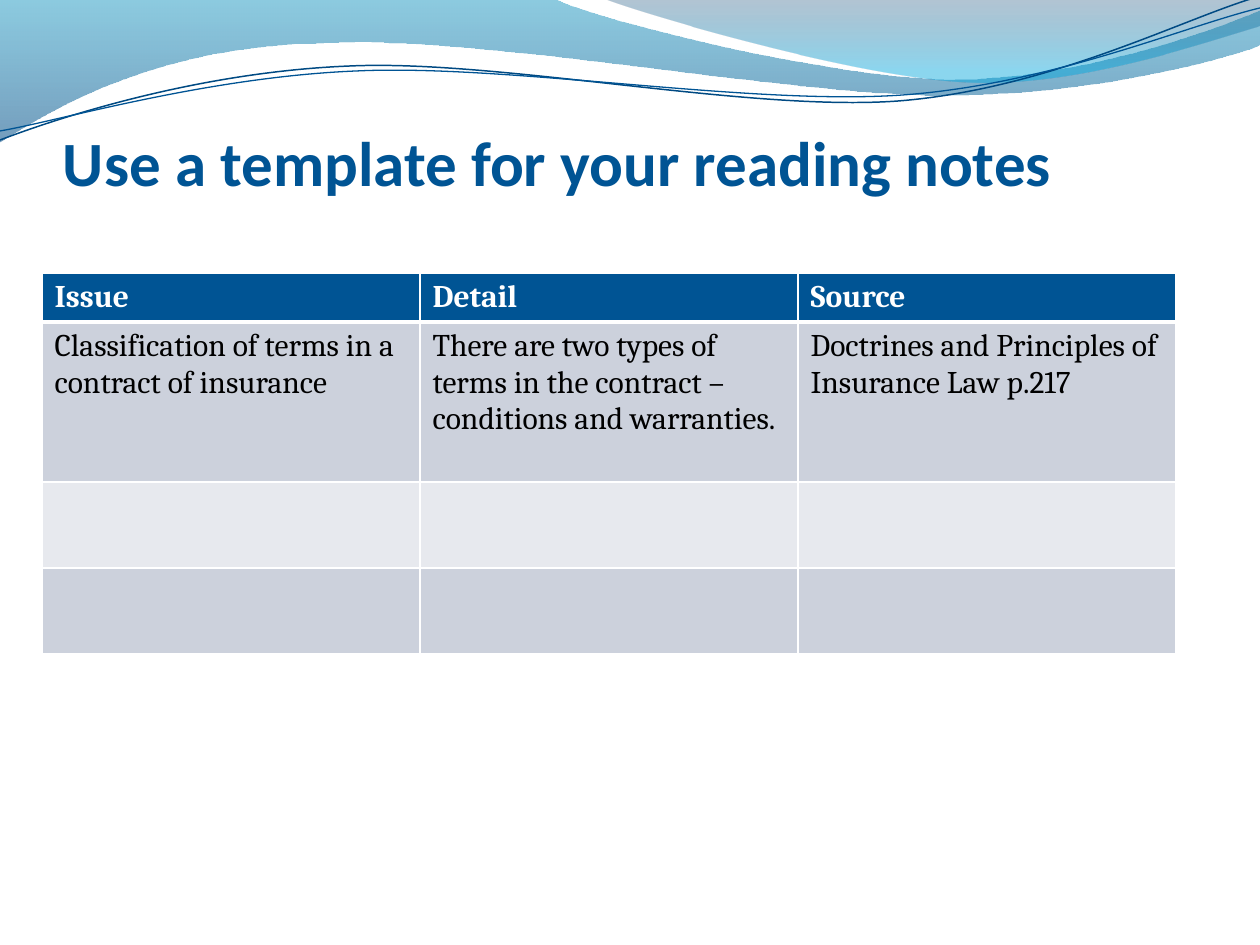
from dataclasses import dataclass

from lxml import etree
from pptx import Presentation
from pptx.dml.color import RGBColor
from pptx.enum.text import MSO_ANCHOR
from pptx.oxml.ns import qn
from pptx.util import Pt

BOTTOM = MSO_ANCHOR.BOTTOM
EMU = 914400 / 126


def px(n):
    return round(n * EMU)


def rgb(value):
    return RGBColor.from_string(value)


@dataclass(frozen=True)
class Theme:
    blue: str = "005494"
    deep_blue: str = "004A83"
    white: str = "FFFFFF"
    black: str = "000000"
    band_dark: str = "CCD1DC"
    band_light: str = "E7E9EE"
    wide_wave: tuple = ((0, "008BBA", 45), (100, "004C86", 55))
    corner_wave: tuple = ((0, "003E6D", 30), (80, "00A6DD", 45))
    title_font: str = "Calibri"
    body_font: str = "Cambria"
    title_size: int = 36
    body_size: int = 18


class Deck:
    def __init__(self, theme, width, height):
        self.theme = theme
        self.prs = Presentation()
        self.prs.slide_width, self.prs.slide_height = px(width), px(height)
        self.slide = self.prs.slides.add_slide(self.prs.slide_layouts[6])

    def add_text(self, tf, text, color, **formats):
        r = tf.paragraphs[0].add_run()
        r.text = text
        r.font.color.rgb = rgb(color)
        for name, value in formats.items():
            setattr(r.font, name, value)

    def curve(self, start, segments, close=False):
        points = [seg[i:i + 2] for seg in segments for i in range(0, len(seg), 2)]
        builder = self.slide.shapes.build_freeform(*start, scale=EMU)
        builder.add_line_segments(points, close=close)
        sp = builder.convert_to_shape()
        sp.shadow.inherit = False
        nodes = iter(list(sp._element.iter(qn("a:lnTo"))))
        for seg in segments:
            group = [next(nodes) for _ in range(len(seg) // 2)]
            if len(group) == 3:
                bezier = etree.Element(qn("a:cubicBezTo"))
                group[0].addprevious(bezier)
                for node in group:
                    bezier.append(node[0])
                    node.getparent().remove(node)
        return sp

    def wave(self, start, segments, stops):
        sp = self.curve(start, segments, close=True)
        sp.line.fill.background()
        sp.fill.gradient()
        sp.fill.gradient_angle = 270
        for stop, (position, color, _) in zip(sp.fill.gradient_stops, stops):
            stop.position = position / 100
            stop.color.rgb = rgb(color)
        for node, (_, _, opacity) in zip(sp._element.spPr.iter(qn("a:srgbClr")), stops):
            etree.SubElement(node, qn("a:alpha"), val=str(opacity * 1000))

    def stroke(self, start, segments, color, weight):
        sp = self.curve(start, segments)
        sp.fill.background()
        sp.line.color.rgb = rgb(color)
        sp.line.width = Pt(weight)

    def title(self, text, left, top, width, height):
        t = self.theme
        tf = self.slide.shapes.add_textbox(*map(px, (left, top, width, height))).text_frame
        formats = {"word_wrap": True, "vertical_anchor": BOTTOM, "margin_left": 0,
                   "margin_right": 0, "margin_top": px(6), "margin_bottom": 0}
        for name, value in formats.items():
            setattr(tf, name, value)
        self.add_text(tf, text, t.blue, name=t.title_font, size=Pt(t.title_size), bold=True)

    def borders(self, cell, weights):
        tc_pr = cell._tc.get_or_add_tcPr()
        for side, weight in weights.items():
            ln = etree.SubElement(tc_pr, qn(f"a:ln{side}"), w=str(Pt(weight)))
            fill = etree.SubElement(ln, qn("a:solidFill"))
            etree.SubElement(fill, qn("a:srgbClr"), val=self.theme.white)

    def table(self, rows, left, top, col_width, heights):
        t = self.theme
        cols = len(rows[0])
        table = self.slide.shapes.add_table(
            len(rows), cols, px(left), px(top), px(col_width * cols), px(sum(heights))).table
        for col in table.columns:
            col.width = px(col_width)
        for i, (texts, height) in enumerate(zip(rows, heights)):
            table.rows[i].height = px(height)
            header = i == 0
            fill = t.blue if header else t.band_dark if i % 2 else t.band_light
            weights = {"L": 1, "R": 1, "T": 3 if i == 1 else 1, "B": 3 if header else 1}
            for cell, text in zip(table.rows[i].cells, texts):
                self.borders(cell, weights)
                cell.fill.solid()
                cell.fill.fore_color.rgb = rgb(fill)
                if text:
                    self.add_text(cell.text_frame, text, t.white if header else t.black,
                                  name=t.body_font, size=Pt(t.body_size), bold=header)


def main():
    theme = Theme()
    deck = Deck(theme, 1260, 945)
    deck.wave((0, 0), [
        (554, -1), (600, 21, 837, 79, 955, 79), (1075, 79, 1207, 33, 1260, 11),
        (1261, 45), (1239, 55, 1096, 96, 940, 95), (784, 95, 481, 35, 324, 43),
        (163, 45, 58, 105, -1, 142)], theme.wide_wave)
    deck.wave((604, -1), [
        (641, 14, 859, 78, 969, 82), (1079, 87, 1211, 40, 1260, 26),
        (1260, 0)], theme.corner_wave)
    deck.stroke((0, 140), [
        (60, 117, 199, 72, 349, 66), (498, 59, 747, 112, 898, 101),
        (1050, 89, 1182, 19, 1257, -3)], theme.deep_blue, 0.85)
    deck.stroke((0, 131), [
        (59, 121, 207, 77, 357, 71), (508, 64, 752, 106, 903, 95),
        (1053, 84, 1185, 26, 1260, 8)], theme.blue, 0.75)
    deck.table([
        ("Issue", "Detail", "Source"),
        ("Classification of terms in a contract of insurance",
         "There are two types of terms in the contract – conditions and warranties.",
         "Doctrines and Principles of Insurance Law p.217"),
        ("", "", ""),
        ("", "", "")], 42, 273, 378, (49, 160, 86, 86))
    deck.title("Use a template for your reading notes", 63, 97, 1134, 102)
    deck.prs.save("out.pptx")


if __name__ == "__main__":
    main()
